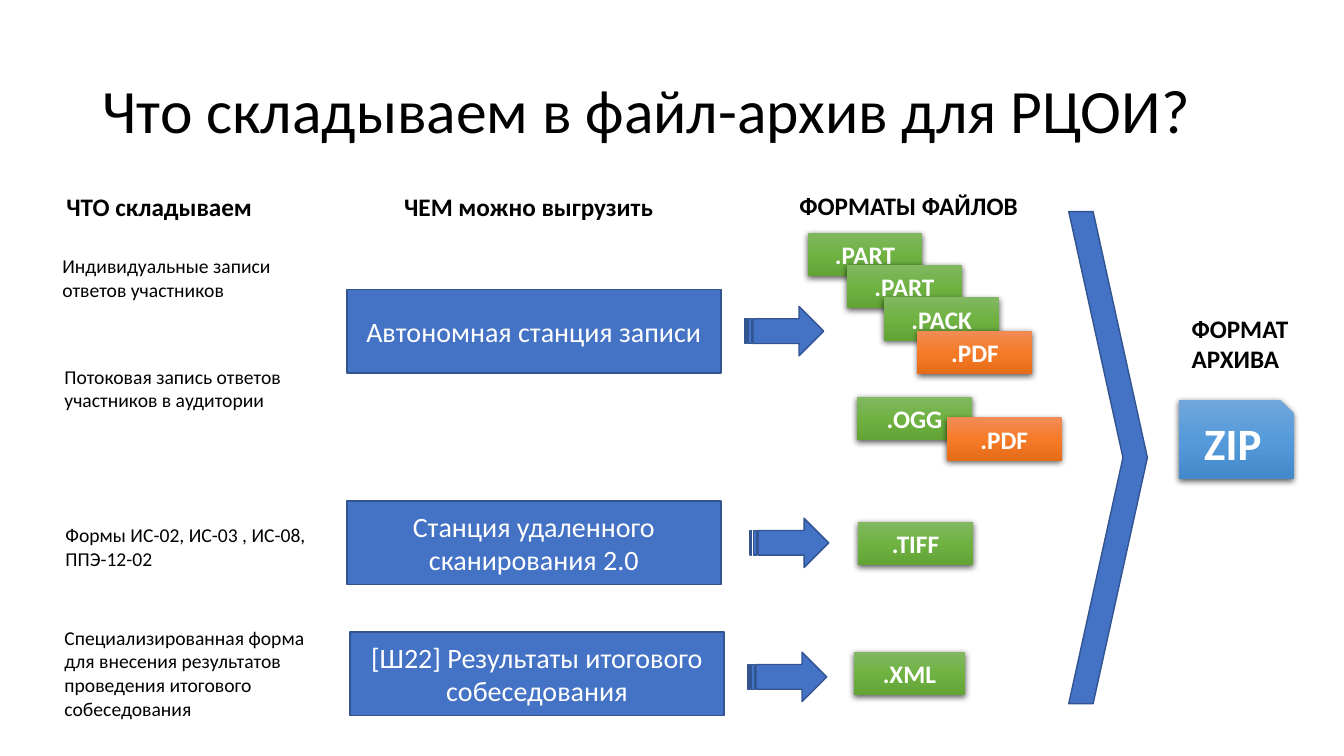
import pptx
import pptx.util
import pptx.oxml
import pptx.oxml.ns
from pptx.enum.shapes import MSO_SHAPE
from pptx.enum.text import MSO_ANCHOR, MSO_AUTO_SIZE, PP_ALIGN

Inches = pptx.util.Inches
RGB = pptx.dml.color.RGBColor
NS = pptx.oxml.ns.nsdecls("a")

COLORS = {
    "black": "000000", "white": "FFFFFF", "blue": "4472C4", "edge": "325491",
    "green": ("81B861", "6FB242", "62A336"),
    "orange": ("F18C57", "F67B28", "E56C19"),
    "sky": ("71A6DB", "559BDB", "448ACA"),
}

deck = pptx.Presentation()
deck.slide_width, deck.slide_height = Inches(13.33), Inches(7.5)
slide = deck.slides.add_slide(deck.slide_layouts[6])


def write(shape, text, size, color, bold=False, align=PP_ALIGN.LEFT):
    frame = shape.text_frame
    frame.text = text
    for para in frame.paragraphs:
        para.alignment = align
        para.font.name = "Calibri"
        para.font.size = pptx.util.Pt(size)
        para.font.bold = bold
        para.font.color.rgb = RGB.from_string(COLORS[color])


def block(kind, left, top, width, height, fill="blue"):
    """Add a flat outlined shape, or a glossy shadowed one if the fill has three stops."""
    shape = slide.shapes.add_shape(
        kind, Inches(left), Inches(top), Inches(width), Inches(height))
    shape.shadow.inherit = False
    tone = COLORS[fill]
    if isinstance(tone, str):
        shape.fill.solid()
        shape.fill.fore_color.rgb = RGB.from_string(tone)
        shape.line.color.rgb = RGB.from_string(COLORS["edge"])
        shape.line.width = pptx.util.Pt(1)
        return shape
    shape.line.fill.background()
    shape.fill.gradient()
    shape.fill.gradient_angle = 270
    props = shape.element.spPr
    stops = props.find(".//" + pptx.oxml.ns.qn("a:gsLst"))
    for stop in list(stops):
        stops.remove(stop)
    for place, shade in zip((0, 50000, 100000), tone):
        stops.append(pptx.oxml.parse_xml(
            f'<a:gs {NS} pos="{place}"><a:srgbClr val="{shade}"/></a:gs>'))
    props.find(pptx.oxml.ns.qn("a:effectLst")).append(pptx.oxml.parse_xml(
        f'<a:outerShdw {NS} blurRad="57150" dist="19050" dir="5400000" '
        'algn="ctr" rotWithShape="0"><a:srgbClr val="000000">'
        '<a:alpha val="63000"/></a:srgbClr></a:outerShdw>'))
    return shape


# Title
title = slide.shapes.add_textbox(
    Inches(0.92), Inches(0.4), Inches(11.5), Inches(1.45))
title.text_frame.word_wrap = True
title.text_frame.vertical_anchor = MSO_ANCHOR.MIDDLE
write(title, "Что складываем в файл-архив для РЦОИ?", 44, "black")
title.text_frame.paragraphs[0].line_spacing = 0.9

# Stations and the arrows after them
for left, top, text in [
    (3.44, 2.87, "Автономная станция записи"),
    (3.44, 4.97, "Станция удаленного сканирования 2.0"),
    (3.47, 6.27, "[Ш22] Результаты итогового собеседования"),
]:
    box = block(MSO_SHAPE.RECTANGLE, left, top, 3.71, 0.83)
    write(box, text, 20, "white", align=PP_ALIGN.CENTER)

for left, top in [(7.39, 3.04), (7.44, 5.14), (7.42, 6.47)]:
    block(MSO_SHAPE.STRIPED_RIGHT_ARROW, left, top, 0.78, 0.49)

# File formats, back to front
for left, top, width, text, fill in [
    (8.01, 2.31, 1.14, ".PART", "green"),
    (8.4, 2.63, 1.14, ".PART", "green"),
    (8.77, 2.95, 1.14, ".PACK", "green"),
    (9.1, 3.28, 1.14, ".PDF", "orange"),
    (8.5, 3.94, 1.14, ".OGG", "green"),
    (9.39, 4.14, 1.14, ".PDF", "orange"),
    (8.51, 5.18, 1.14, ".TIFF", "green"),
    (8.47, 6.47, 1.1, ".XML", "green"),
]:
    tag = block(MSO_SHAPE.RECTANGLE, left, top, width, 0.43, fill)
    write(tag, text, 18, "white", True, PP_ALIGN.CENTER)

# Archive
chevron = block(MSO_SHAPE.CHEVRON, 10.6, 2.1, 0.78, 4.88)
chevron.adjustments[0] = 0.69
archive = block(MSO_SHAPE.SNIP_1_RECTANGLE, 11.69, 3.97, 1.14, 0.78, "sky")
write(archive, "ZIP", 32, "white", True, PP_ALIGN.CENTER)

# Contents (wrapped) and column heads (bold, one line each)
for left, top, width, height, text, head in [
    (0.52, 2.47, 2.65, 0.57, "Индивидуальные записи ответов участников", False),
    (0.54, 3.57, 2.65, 0.57, "Потоковая запись ответов участников в аудитории", False),
    (0.55, 5.14, 2.65, 0.57, "Формы ИС-02, ИС-03 , ИС-08,\nППЭ-12-02", False),
    (0.54, 6.16, 2.65, 1.04, "Специализированная форма для внесения результатов "
     "проведения итогового собеседования", False),
    (0.56, 1.85, 2.06, 0.4, "ЧТО складываем", True),
    (3.91, 1.85, 2.69, 0.4, "ЧЕМ можно выгрузить", True),
    (7.83, 1.84, 2.39, 0.4, "ФОРМАТЫ ФАЙЛОВ", True),
    (11.72, 3.06, 1.23, 0.71, "ФОРМАТ \vАРХИВА", True),
]:
    label = slide.shapes.add_textbox(
        Inches(left), Inches(top), Inches(width), Inches(height))
    label.text_frame.word_wrap = not head
    label.text_frame.auto_size = MSO_AUTO_SIZE.SHAPE_TO_FIT_TEXT
    write(label, text, 18 if head else 14, "black", head)

deck.save("out.pptx")
